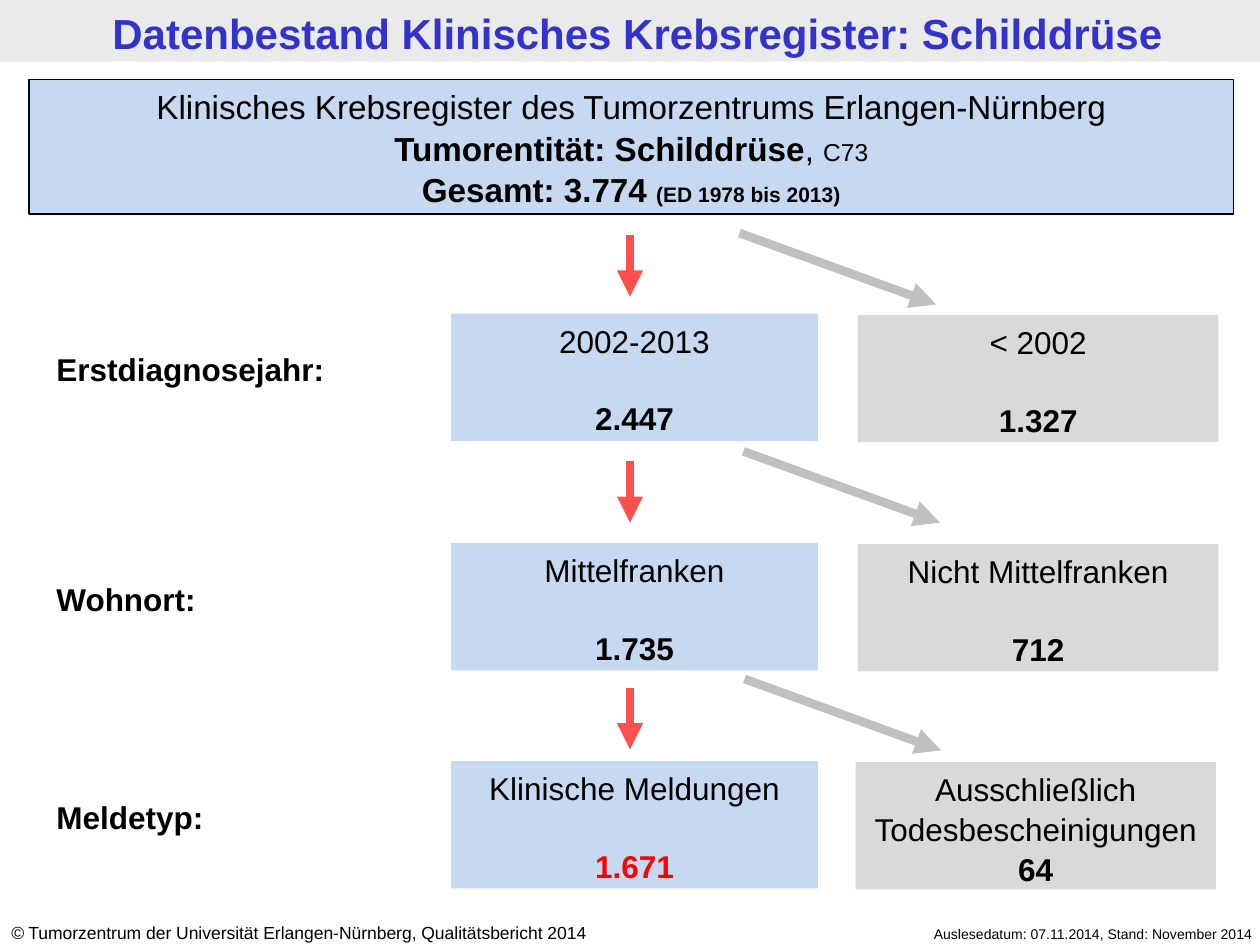
"""Build the slide on the thyroid data of the clinical cancer register."""
from lxml.etree import SubElement
from pptx import Presentation
from pptx.dml.color import RGBColor
from pptx.enum.shapes import MSO_CONNECTOR as Connector, MSO_SHAPE as Shape
from pptx.enum.text import MSO_ANCHOR as Anchor, MSO_AUTO_SIZE as AutoSize, PP_ALIGN as Align
from pptx.oxml.ns import qn
from pptx.util import Pt

COLORS = {
    "black": "000000", "title": "3333CC", "band": "EAEAEA", "blue": "C6D9F1",
    "gray": "D9D9D9", "red": "FF0000", "red_arrow": "FF5050", "gray_arrow": "C0C0C0",
}
STAGES = [
    ("Erstdiagnosejahr:", 179.3, "2002-2013", "2.447", "black", "< 2002", "1.327", 490.3),
    ("Wohnort:", 310.3, "Mittelfranken", "1.735", "black", "Nicht Mittelfranken", "712", 490.3),
    ("Meldetyp:", 434.9, "Klinische Meldungen", "1.671", "red",
     "Ausschließlich Todesbescheinigungen", "64", 488.9),
]
ARROWS = [(134.5, 422.6, 133.2), (263.7, 424.8, 257.9), (393.2, 425.5, 388)]
LINE_HEIGHT = 21.7


def color(name):
    return RGBColor.from_string(COLORS[name])


def add_run(paragraph, text, size=18, bold=False, italic=False, fill="black"):
    run = paragraph.add_run()
    run.text = text
    font = run.font
    font.name, font.size, font.bold, font.italic = "Arial", Pt(size), bold, italic
    font.color.rgb = color(fill)


def write(shape, paragraphs, align=Align.CENTER, spacing=1.05, anchor=Anchor.TOP, gap=0):
    """Fill a shape with paragraphs, each a list of (text, format) runs."""
    frame = shape.text_frame
    frame.word_wrap = True
    frame.auto_size = AutoSize.SHAPE_TO_FIT_TEXT
    frame.vertical_anchor = anchor
    for index, runs in enumerate(paragraphs):
        paragraph = frame.add_paragraph() if index else frame.paragraphs[0]
        paragraph.alignment = align
        paragraph.line_spacing = spacing
        if index and gap:
            paragraph.space_before = Pt(gap)
        for text, style in runs:
            add_run(paragraph, text, **style)


def add_box(slide, left, top, width, height, fill, outlined=False):
    shape = slide.shapes.add_shape(Shape.RECTANGLE, Pt(left), Pt(top), Pt(width), Pt(height))
    shape.shadow.inherit = False
    shape.fill.solid()
    shape.fill.fore_color.rgb = color(fill)
    if outlined:
        shape.line.color.rgb = color("black")
        shape.line.width = Pt(0.75)
    else:
        shape.line.fill.background()
    return shape


def add_label(slide, left, top, width, height, runs, **layout):
    box = slide.shapes.add_textbox(Pt(left), Pt(top), Pt(width), Pt(height))
    write(box, [runs], **layout)


def add_arrow(slide, left, top, run, drop, fill):
    arrow = slide.shapes.add_connector(
        Connector.STRAIGHT, Pt(left), Pt(top), Pt(left + run), Pt(top + drop))
    arrow.line.color.rgb = color(fill)
    arrow.line.width = Pt(5)
    SubElement(arrow.line._get_or_add_ln(), qn("a:tailEnd"), type="triangle")
    SubElement(arrow._element.spPr, qn("a:effectLst"))


def add_count(slide, left, top, width, fill, caption, count, count_color="black", gap=LINE_HEIGHT):
    box = add_box(slide, left, top, width, 72.8, fill)
    write(box, [[(caption, {})], [(count, {"bold": True, "fill": count_color})]], gap=gap)


def add_stage(slide, label, top, kept, kept_count, kept_color, dropped, dropped_count, dropped_left):
    add_label(slide, 25.2, top + 16.3, 198.7, 28.8, [(label, {"bold": True})], align=Align.LEFT)
    add_count(slide, 257.8, top, 209.5, "blue", kept, kept_count, kept_color)
    gap = 0 if len(dropped) > 20 else LINE_HEIGHT
    add_count(slide, dropped_left, top + 0.6, 205.9, "gray", dropped, dropped_count, gap=gap)


def add_header(slide):
    add_box(slide, 0, 0, 720, 35.3, "band")
    title = "Datenbestand Klinisches Krebsregister: Schilddrüse"
    add_label(slide, 4.3, 0.7, 720, 35.3,
              [(title, {"size": 24, "bold": True, "fill": "title"})], spacing=1)
    total = add_box(slide, 16.6, 45.4, 688.3, 77, "blue", outlined=True)
    large, strong = {"size": 19}, {"size": 19, "bold": True}
    write(total, [
        [("Klinisches Krebsregister des Tumorzentrums Erlangen-Nürnberg", large)],
        [("Tumorentität: Schilddrüse", strong), (", ", large), ("C73", {"size": 14})],
        [("Gesamt: 3.774 ", strong), ("(ED 1978 bis 2013)", {"size": 12, "bold": True})],
    ], anchor=Anchor.MIDDLE)


def add_footer(slide):
    add_label(slide, 478.8, 524.9, 244.1, 17.3,
              [("Auslesedatum: 07.11.2014, Stand: November 2014", {"size": 8})], align=Align.RIGHT)
    source = " Tumorzentrum der Universität Erlangen-Nürnberg, Qualitätsbericht 2014"
    add_label(slide, -0.7, 522.7, 377.3, 19.4,
              [("©", {"size": 10, "italic": True}), (source, {"size": 10})], align=Align.LEFT)


def main():
    presentation = Presentation()
    presentation.slide_width, presentation.slide_height = Pt(720), Pt(540)
    slide = presentation.slides.add_slide(presentation.slide_layouts[6])
    add_header(slide)
    for stage in STAGES:
        add_stage(slide, *stage)
    for red_top, gray_left, gray_top in ARROWS:
        add_arrow(slide, 360, red_top, 0, 35, "red_arrow")
        add_arrow(slide, gray_left, gray_top, 112.3, 40.8, "gray_arrow")
    add_footer(slide)
    presentation.save("out.pptx")


if __name__ == "__main__":
    main()
